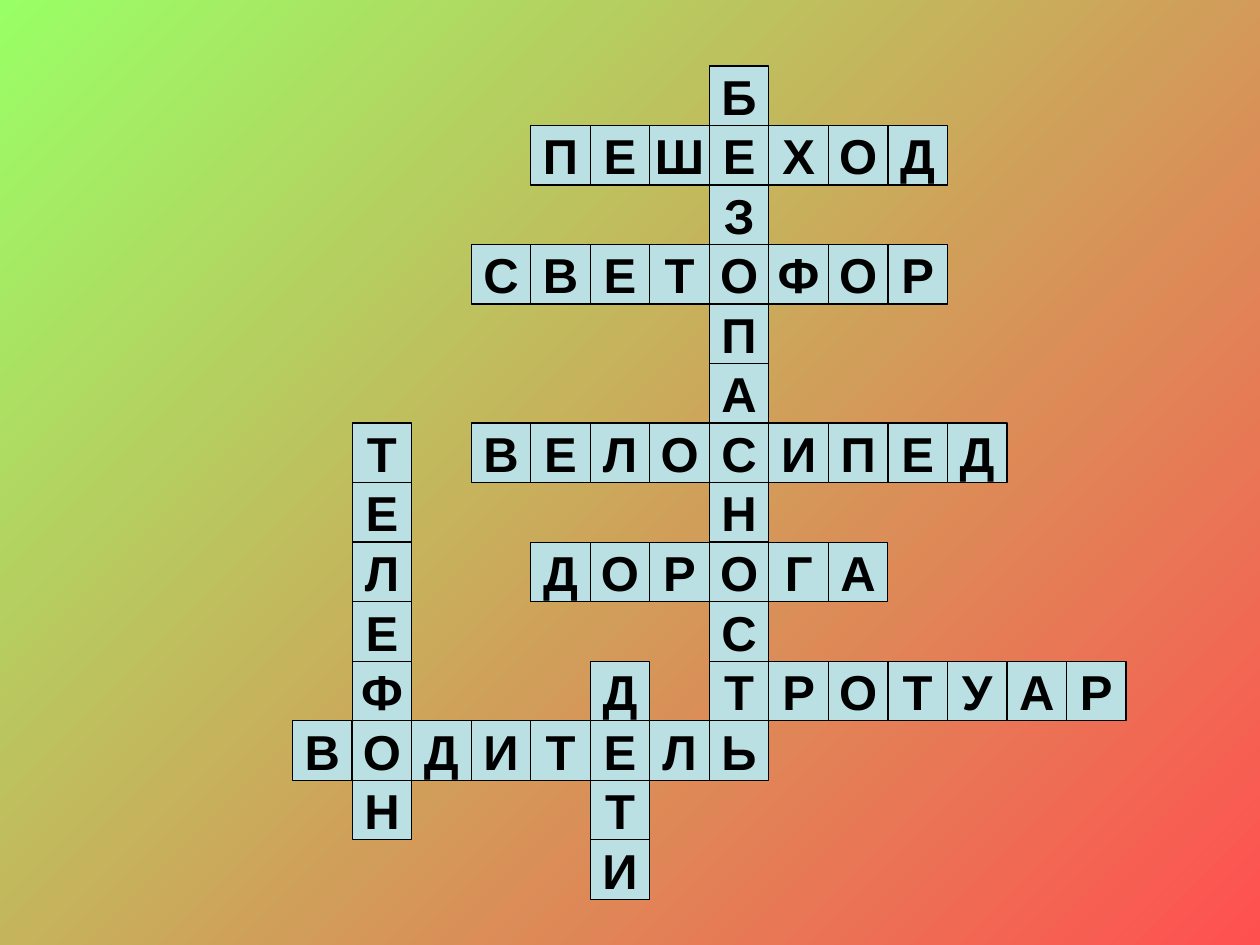
from pptx import Presentation
from pptx.dml.color import RGBColor
from pptx.enum.shapes import MSO_SHAPE
from pptx.enum.text import MSO_ANCHOR, PP_ALIGN
from pptx.util import Cm, Pt

GREEN = RGBColor(0x99, 0xFF, 0x66)
RED = RGBColor(0xFF, 0x50, 0x50)
PALE_BLUE = RGBColor(0xBB, 0xE0, 0xE3)
BLACK = RGBColor(0x00, 0x00, 0x00)

CELL = 1.2
GRID_LEFT = 5.9
GRID_TOP = 1.33

ACROSS = (0, 1)
DOWN = (1, 0)

# word, first row, first column, direction as (row step, column step)
WORDS = [
    ("БЕЗОПАСНОСТЬ", 0, 7, DOWN),
    ("ВОДИТЕЛЬ", 11, 0, ACROSS),
    ("ДЕТИ", 10, 5, DOWN),
    ("ТЕЛЕФОН", 6, 1, DOWN),
    ("ТРОТУАР", 10, 7, ACROSS),
    ("ДОРОГА", 8, 4, ACROSS),
    ("ВЕЛОСИПЕД", 6, 3, ACROSS),
    ("СВЕТОФОР", 3, 3, ACROSS),
    ("ПЕШЕХОД", 1, 4, ACROSS),
]

presentation = Presentation()
presentation.slide_width = Cm(25.4)
presentation.slide_height = Cm(19.05)
slide = presentation.slides.add_slide(presentation.slide_layouts[6])

background = slide.background.fill
background.gradient()
background.gradient_angle = 315  # counter-clockwise: top left to bottom right
for stop, color, position in zip(background.gradient_stops, (GREEN, RED), (0, 1)):
    stop.color.rgb = color
    stop.position = position

# Crossing words share a cell, so each cell is kept once
letters = {}
for word, first_row, first_column, (row_step, column_step) in WORDS:
    for index, letter in enumerate(word):
        cell = (first_row + index * row_step, first_column + index * column_step)
        letters[cell] = letter

for (row, column), letter in letters.items():
    shape = slide.shapes.add_shape(
        MSO_SHAPE.RECTANGLE,
        Cm(GRID_LEFT + column * CELL), Cm(GRID_TOP + row * CELL),
        Cm(CELL), Cm(CELL),
    )
    shape.shadow.inherit = False
    shape.fill.solid()
    shape.fill.fore_color.rgb = PALE_BLUE
    shape.line.color.rgb = BLACK
    shape.line.width = Pt(0.75)

    text_frame = shape.text_frame
    text_frame.word_wrap = False
    text_frame.vertical_anchor = MSO_ANCHOR.MIDDLE
    paragraph = text_frame.paragraphs[0]
    paragraph.alignment = PP_ALIGN.CENTER
    run = paragraph.add_run()
    run.text = letter
    run.font.name = "Arial"
    run.font.size = Pt(28)
    run.font.bold = True
    run.font.color.rgb = BLACK

presentation.save("out.pptx")
